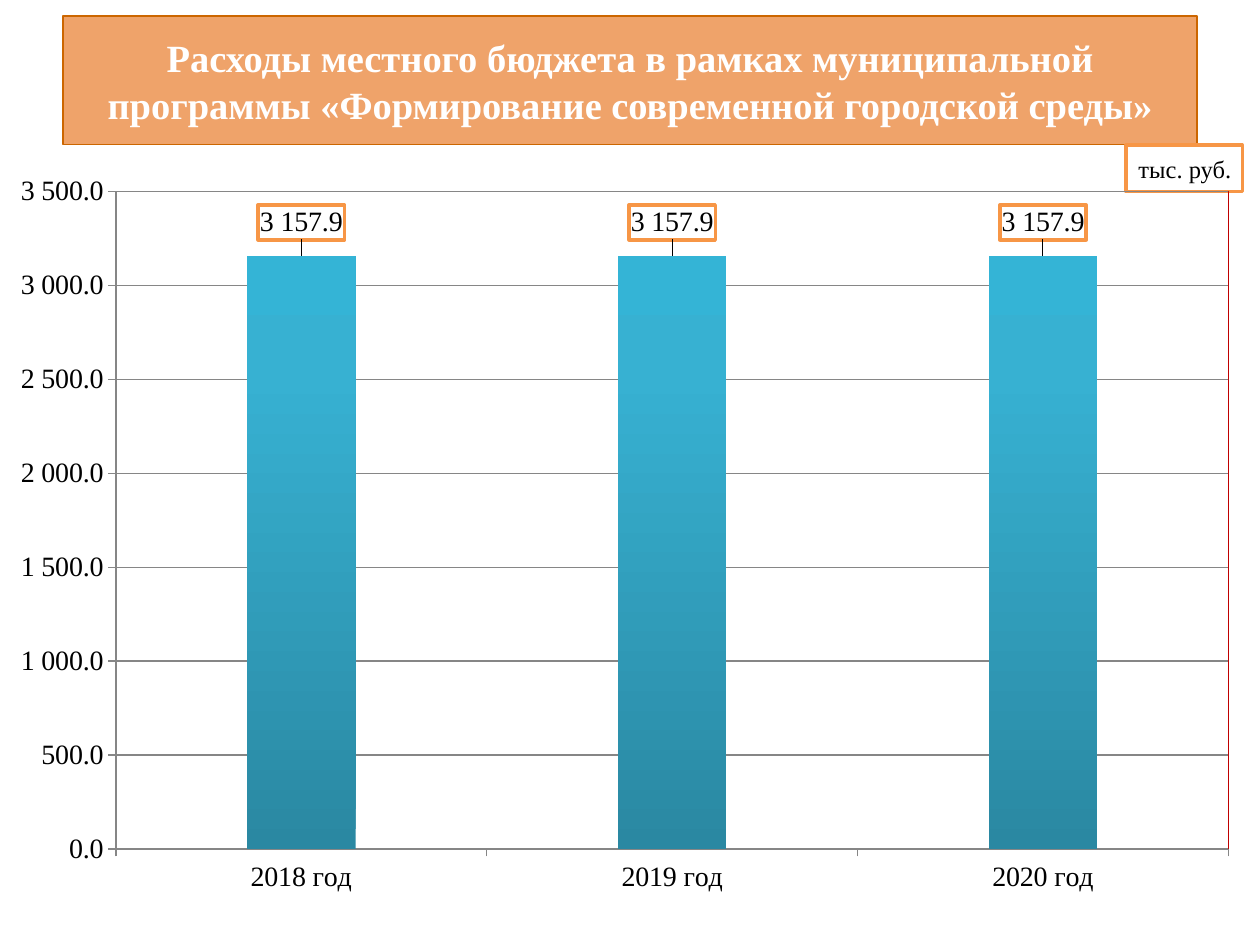
from dataclasses import dataclass

from lxml.etree import SubElement
from pptx import Presentation
from pptx.chart.data import CategoryChartData
from pptx.dml.color import RGBColor
from pptx.enum.chart import XL_CHART_TYPE, XL_TICK_MARK
from pptx.enum.shapes import MSO_SHAPE
from pptx.enum.text import MSO_ANCHOR, MSO_AUTO_SIZE, PP_ALIGN
from pptx.oxml import parse_xml
from pptx.oxml.ns import nsdecls, qn
from pptx.util import Pt

TITLE = "Расходы местного бюджета в рамках муниципальной программы «Формирование современной городской среды»"
UNIT = "тыс. руб."
SPENDING = {"2018 год": 3157.9, "2019 год": 3157.9, "2020 год": 3157.9}
NUMBER_FORMAT = r"#\ ##0.0"
PLOT_AREA = {"x": 0.092, "y": 0.058, "w": 0.883, "h": 0.822}
LABEL_LIFT = -0.07


@dataclass(frozen=True)
class Theme:
    font: str = "Times New Roman"
    title_size: int = 22
    unit_size: int = 14
    chart_size: int = 16
    white: str = "FFFFFF"
    black: str = "000000"
    banner: str = "E97C2B"
    banner_line: str = "CC6600"
    accent: str = "F79646"
    grid: str = "868686"
    plot_line: str = "C00000"
    gradient: tuple = ((0, "2A88A2"), (80, "37B1D2"), (100, "34B4D6"))


THEME = Theme()


def color(value):
    return RGBColor.from_string(value)


def place(shape, left, top, width, height):
    shape.left, shape.top, shape.width, shape.height = map(Pt, (left, top, width, height))


def outline(line, value, width):
    line.color.rgb = color(value)
    line.width = Pt(width)


def style_font(font, size, value, bold=False):
    font.name = THEME.font
    font.size = Pt(size)
    font.bold = bold
    font.color.rgb = color(value)


def write_text(shape, text, *, size, value, bold=False, align=PP_ALIGN.LEFT, wrap=True):
    frame = shape.text_frame
    frame.auto_size = MSO_AUTO_SIZE.NONE
    frame.word_wrap = wrap
    frame.vertical_anchor = MSO_ANCHOR.MIDDLE
    para = frame.paragraphs[0]
    para.alignment = align
    span = para.add_run()
    span.text = text
    style_font(span.font, size, value, bold)


def fill_shape(shape, value, line_value, line_width):
    shape.fill.solid()
    shape.fill.fore_color.rgb = color(value)
    outline(shape.line, line_value, line_width)


def add_title(page):
    title = page.shapes.title
    place(title, 36, 9.2, 648, 73.6)
    fill_shape(title, THEME.banner, THEME.banner_line, 0.75)
    fill_color = title.fill._xPr.find(qn("a:solidFill"))[0]
    SubElement(fill_color, qn("a:alpha")).set("val", "70000")
    write_text(title, TITLE, size=THEME.title_size, value=THEME.white, bold=True, align=PP_ALIGN.CENTER)


def add_unit(page):
    box = page.shapes.add_shape(MSO_SHAPE.RECTANGLE, 0, 0, 0, 0)
    place(box, 643.5, 83, 66.5, 26.5)
    box.shadow.inherit = False
    fill_shape(box, THEME.white, THEME.accent, 2)
    write_text(box, UNIT, size=THEME.unit_size, value=THEME.black, wrap=False)


def chart_xml(tag, content):
    return parse_xml(f'<c:{tag} {nsdecls("c", "a")}>{content}</c:{tag}>')


def label_xml():
    shows = '<c:showLegendKey val="0"/><c:showVal val="1"/>' + "".join(
        f'<c:{name} val="0"/>' for name in ("showCatName", "showSerName", "showPercent", "showBubbleSize")
    )
    look = (
        f'<c:numFmt formatCode="{NUMBER_FORMAT}" sourceLinked="0"/>'
        f'<c:spPr><a:solidFill><a:srgbClr val="{THEME.white}"/></a:solidFill>'
        f'<a:ln w="{Pt(2)}"><a:solidFill><a:srgbClr val="{THEME.accent}"/></a:solidFill></a:ln></c:spPr>'
        f'<c:dLblPos val="inEnd"/>{shows}'
    )
    lift = f'<c:layout><c:manualLayout><c:x val="0"/><c:y val="{LABEL_LIFT}"/></c:manualLayout></c:layout>'
    points = "".join(f'<c:dLbl><c:idx val="{index}"/>{lift}{look}</c:dLbl>' for index in range(len(SPENDING)))
    return chart_xml("dLbls", points + look)


def gradient_xml():
    stops = "".join(
        f'<a:gs pos="{position * 1000}"><a:srgbClr val="{value}"/></a:gs>' for position, value in THEME.gradient
    )
    return chart_xml("spPr", f'<a:gradFill><a:gsLst>{stops}</a:gsLst><a:lin ang="16200000" scaled="0"/></a:gradFill>')


def layout_xml():
    modes = '<c:layoutTarget val="inner"/><c:xMode val="edge"/><c:yMode val="edge"/>'
    sides = "".join(f'<c:{side} val="{share}"/>' for side, share in PLOT_AREA.items())
    return chart_xml("layout", f"<c:manualLayout>{modes}{sides}</c:manualLayout>")


def style_series(series):
    node = series._element
    series.format.fill.background()
    node.replace(node.find(qn("c:spPr")), gradient_xml())
    node.find(qn("c:cat")).addprevious(label_xml())


def add_spending_chart(page):
    data = CategoryChartData(number_format=NUMBER_FORMAT)
    data.categories = list(SPENDING)
    data.add_series("Series 1", list(SPENDING.values()))
    chart = page.shapes.add_chart(
        XL_CHART_TYPE.COLUMN_STACKED, Pt(0), Pt(83), Pt(720), Pt(457), data
    ).chart
    chart.has_legend = False
    chart.has_title = False
    style_font(chart.font, THEME.chart_size, THEME.black)

    plot = chart.plots[0]
    plot.gap_width = 241
    plot.overlap = 100
    plot.vary_by_categories = False
    style_series(plot.series[0])

    values = chart.value_axis
    values.minimum_scale, values.maximum_scale, values.major_unit = 0, 3500, 500
    values.has_major_gridlines = True
    outline(values.major_gridlines.format.line, THEME.grid, 0.75)
    values.tick_labels.number_format = NUMBER_FORMAT
    values.tick_labels.number_format_is_linked = False
    for axis in (values, chart.category_axis):
        axis.major_tick_mark = XL_TICK_MARK.OUTSIDE
        axis.minor_tick_mark = XL_TICK_MARK.NONE
        outline(axis.format.line, THEME.grid, 0.75)

    space = chart._chartSpace
    area = space.find(qn("c:chart")).find(qn("c:plotArea"))
    for old in area.findall(qn("c:layout")):
        area.remove(old)
    area.insert(0, layout_xml())
    border = f'<a:ln w="{Pt(0.75)}"><a:solidFill><a:srgbClr val="{THEME.plot_line}"/></a:solidFill></a:ln>'
    area.append(chart_xml("spPr", f"<a:noFill/>{border}"))
    space.find(qn("c:chart")).addnext(chart_xml("spPr", "<a:noFill/><a:ln><a:noFill/></a:ln>"))


def main():
    deck = Presentation()
    deck.slide_width, deck.slide_height = Pt(720), Pt(540)
    page = deck.slides.add_slide(deck.slide_layouts[5])
    add_title(page)
    add_unit(page)
    add_spending_chart(page)
    deck.save("out.pptx")


if __name__ == "__main__":
    main()
